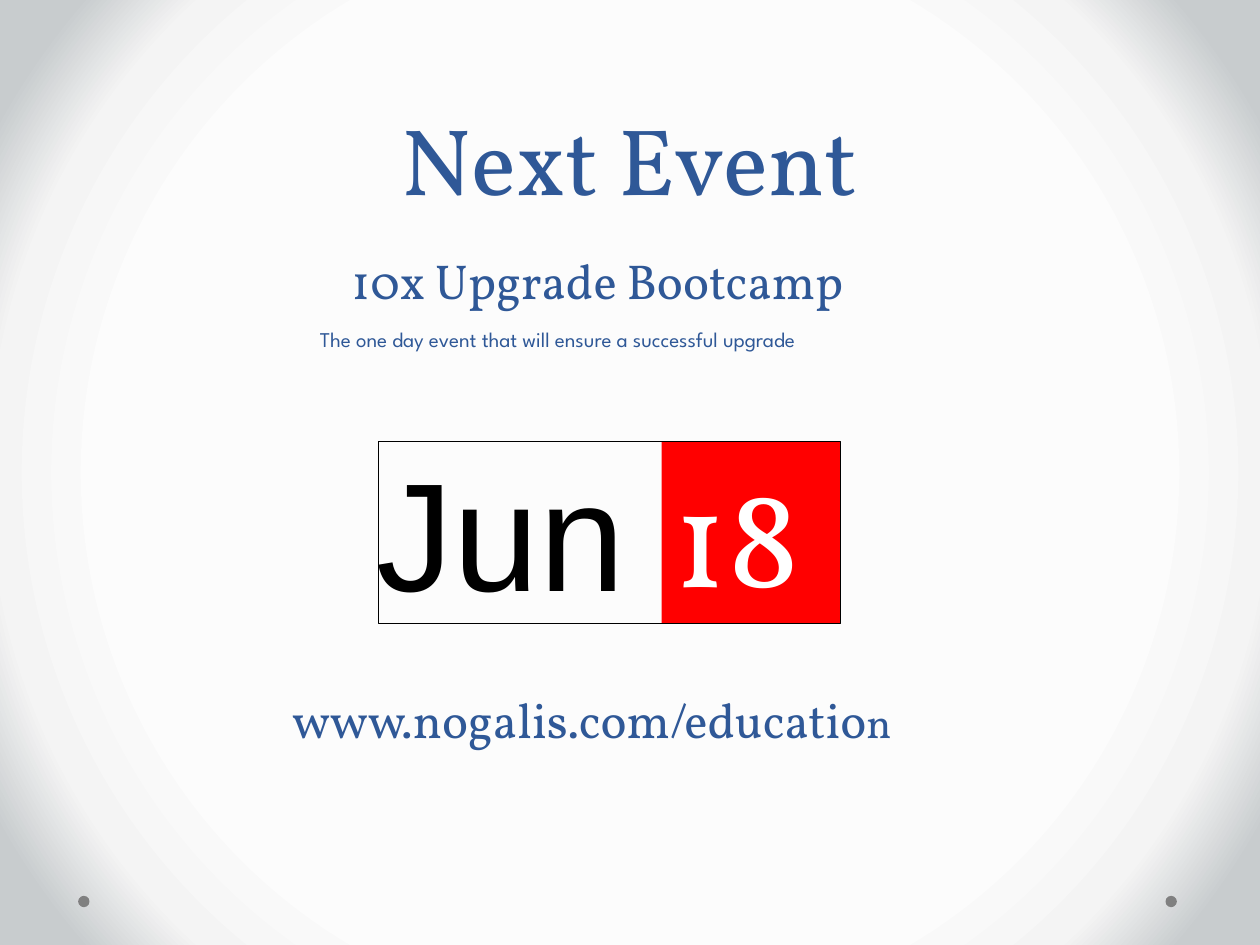
import pptx
import pptx.util
import pptx.dml.color
import pptx.enum.shapes
import pptx.enum.text
import pptx.oxml
import pptx.oxml.ns

theme = {
    "blue": "2F5897", "black": "000000", "white": "FFFFFF",
    "red": "FF0000", "gray": "808080",
    "glow": [(66, "FCFCFC"), (81, "F4F4F4"), (92, "C8CCCE")],
    "serif": "Vollkorn", "sans": "League Spartan", "plain": "Arial",
    "title": 54, "lead": 58, "month": 88, "day": 80,
    "head": 28, "tail": 24, "note": 12, "rule": 0.25,
}
kinds = pptx.enum.shapes.MSO_SHAPE
aligns = pptx.enum.text.PP_ALIGN
anchors = pptx.enum.text.MSO_ANCHOR

deck = pptx.Presentation()
deck.slide_width = pptx.util.Inches(10)
deck.slide_height = pptx.util.Inches(7.5)
cell = deck.slide_width / 40
slide = deck.slides.add_slide(deck.slide_layouts[5])


def grid(*spans):
    return [round(span * cell) for span in spans]


def write(frame, text, size, font="serif", color="blue",
          align=aligns.LEFT, anchor=anchors.TOP, lead=None):
    frame.word_wrap = True
    frame.auto_size = pptx.enum.text.MSO_AUTO_SIZE.NONE
    frame.vertical_anchor = anchor
    para = frame.paragraphs[0]
    para.alignment = align
    if lead:
        para.line_spacing = pptx.util.Pt(lead)
    run = para.add_run()
    run.text = text
    run.font.size = pptx.util.Pt(theme[size])
    run.font.name = theme[font]
    run.font.color.rgb = pptx.dml.color.RGBColor.from_string(theme[color])


stops = "".join(f'<a:gs pos="{pos * 1000}"><a:srgbClr val="{tone}"/></a:gs>'
                for pos, tone in theme["glow"])
glow = pptx.oxml.parse_xml(
    f'<a:gradFill {pptx.oxml.ns.nsdecls("a")} rotWithShape="1">'
    f'<a:gsLst>{stops}</a:gsLst><a:path path="circle">'
    '<a:fillToRect l="50000" t="50000" r="50000" b="50000"/>'
    '</a:path></a:gradFill>')
back = slide.background.fill
back.solid()
solid = slide.element.find(".//" + pptx.oxml.ns.qn("a:solidFill"))
solid.getparent().replace(solid, glow)

title = slide.shapes.title
title.left, title.top, title.width, title.height = grid(2, 0, 36, 7)
write(title.text_frame, "Next Event", "title", align=aligns.CENTER,
      anchor=anchors.BOTTOM, lead=theme["lead"])

shapes = [
    (kinds.OVAL, (37, 28.44, 0.36, 0.36), "gray", None),
    (kinds.OVAL, (2.48, 28.44, 0.36, 0.36), "gray", None),
    (kinds.RECTANGLE, (21, 14, 5.68, 5.8), "red", "18"),
    (kinds.RECTANGLE, (12, 14, 14.68, 5.8), None, None),
]
for kind, box, fill, text in shapes:
    shape = slide.shapes.add_shape(kind, *grid(*box))
    shape.shadow.inherit = False
    if fill:
        shape.fill.solid()
        shape.fill.fore_color.rgb = pptx.dml.color.RGBColor.from_string(theme[fill])
        shape.line.fill.background()
    else:
        shape.fill.background()
        shape.line.color.rgb = pptx.dml.color.RGBColor.from_string(theme["black"])
        shape.line.width = pptx.util.Pt(theme["rule"])
    if text:
        write(shape.text_frame, text, "day", color="white")

labels = [
    ((11.56, 13.68, 8.76, 6.32), [("Jun", "month")], "plain", "black"),
    ((8.88, 21.68, 20.92, 2.28),
     [("www.nogalis.com/educatio", "head"), ("n", "tail")], "serif", "blue"),
    ((10.76, 7.76, 17.12, 2.28), [("10x Upgrade Bootcamp", "head")], "serif", "blue"),
    ((9.76, 10.16, 19.16, 1.2),
     [("The one day event that will ensure a successful upgrade", "note")],
     "sans", "blue"),
]
for box, parts, font, color in labels:
    label = slide.shapes.add_textbox(*grid(*box))
    for text, size in parts:
        write(label.text_frame, text, size, font=font, color=color)

deck.save("out.pptx")
